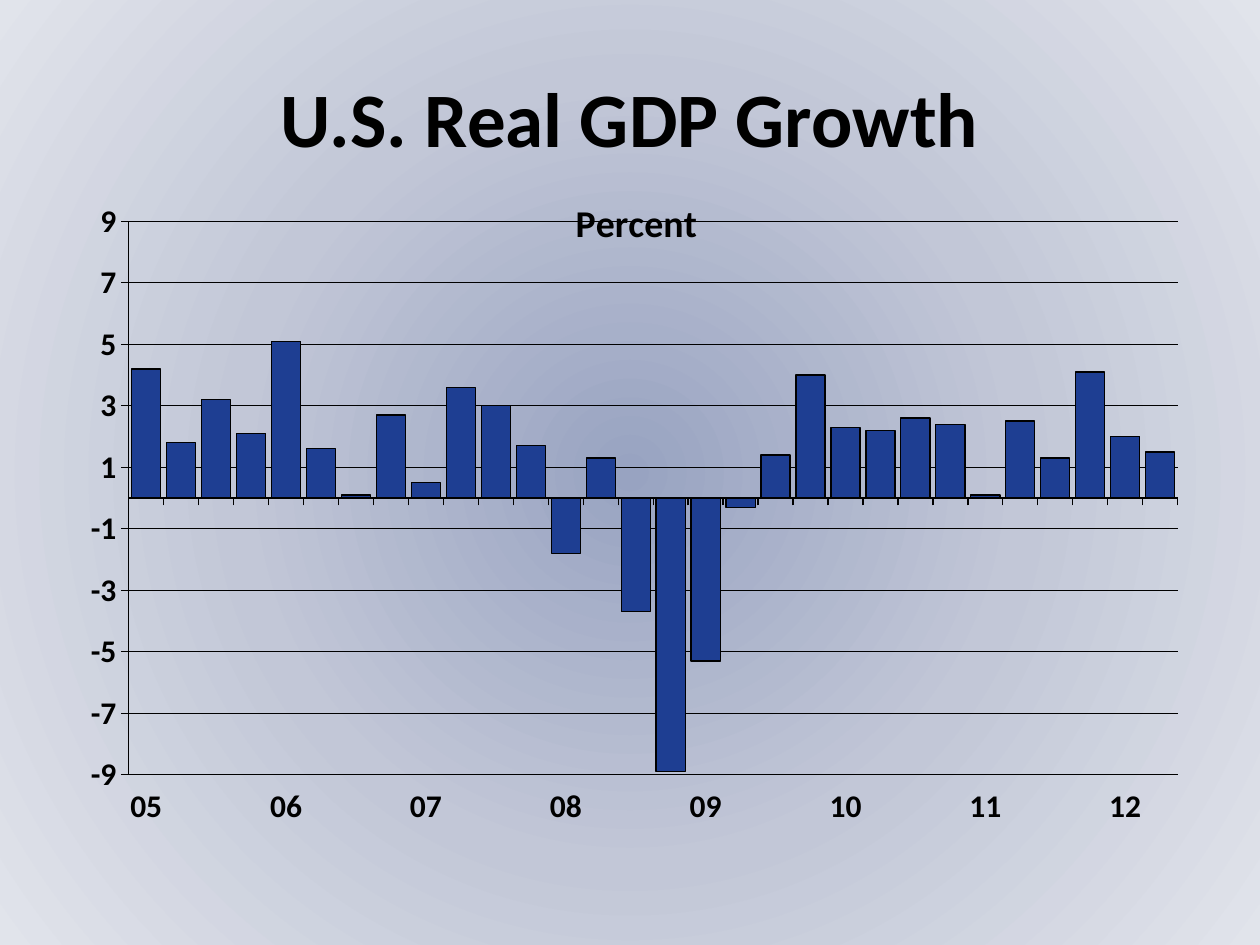
from lxml import etree
from pptx import Presentation
from pptx import util as u
from pptx.chart.data import CategoryChartData
from pptx.dml.color import RGBColor
from pptx.enum import chart as charts, text
from pptx.oxml.ns import qn


def rgb(hex_colour):
    return RGBColor.from_string(hex_colour)


def write(frame, content, size, colour="000000", font="Calibri", bold=True):
    """Fill a text frame with one centred, formatted paragraph."""
    paragraph = frame.paragraphs[0]
    paragraph.alignment = text.PP_ALIGN.CENTER
    run = paragraph.add_run()
    run.text = content
    run.font.size = u.Pt(size)
    run.font.name = font
    run.font.bold = bold
    run.font.color.rgb = rgb(colour)


presentation = Presentation()
presentation.slide_width = u.Inches(10)
presentation.slide_height = u.Inches(7.5)
slide = presentation.slides.add_slide(presentation.slide_layouts[5])

# Radial background, darkest in the centre
fill = slide.background.fill
fill.gradient()
gradient = slide.background._cSld.find(".//" + qn("a:gradFill"))
for child in list(gradient):
    gradient.remove(child)
stops = etree.SubElement(gradient, qn("a:gsLst"))
for position, colour in ((0, "98A3C1"), (50, "C2C7D7"), (100, "E1E4EB")):
    stop = etree.SubElement(stops, qn("a:gs"), pos=str(position * 1000))
    etree.SubElement(stop, qn("a:srgbClr"), val=colour)
circle = etree.SubElement(gradient, qn("a:path"), path="circle")
etree.SubElement(circle, qn("a:fillToRect"), l="50000", t="50000", r="50000", b="50000")

title = slide.shapes.title
title.left, title.top = u.Inches(0.5), u.Inches(0.3)
title.width, title.height = u.Inches(9), u.Inches(1.25)
title.text_frame.vertical_anchor = text.MSO_ANCHOR.MIDDLE
write(title.text_frame, "U.S. Real GDP Growth", size=44)

# Quarterly growth from 2005; only first quarters carry a label
growth = [
    4.2, 1.8, 3.2, 2.1, 5.1, 1.6, 0.1, 2.7, 0.5, 3.6,
    3, 1.7, -1.8, 1.3, -3.7, -8.9, -5.3, -0.3, 1.4, 4,
    2.3, 2.2, 2.6, 2.4, 0.1, 2.5, 1.3, 4.1, 2, 1.5,
]
data = CategoryChartData()
data.categories = [
    "" if quarter % 4 else f"{5 + quarter // 4:02d}" for quarter in range(len(growth))
]
data.add_series("Series 1", growth)
chart = slide.shapes.add_chart(
    charts.XL_CHART_TYPE.COLUMN_CLUSTERED,
    u.Inches(0.5), u.Inches(1.25), u.Inches(9), u.Inches(5.45), data,
).chart
chart.has_legend = False
chart.font.size = u.Pt(18)
chart.font.name = "Calibri"
chart.font.bold = True
chart.font.color.rgb = rgb("000000")
write(chart.chart_title.text_frame, "Percent", size=21.6)
chart.chart_title.include_in_layout = True

plot = chart.plots[0]
plot.gap_width = 20
plot.overlap = 70
plot.vary_by_categories = False
bars = plot.series[0]
bars.invert_if_negative = False
bars.format.fill.solid()
bars.format.fill.fore_color.rgb = rgb("1E3E92")

value_axis, category_axis = chart.value_axis, chart.category_axis
value_axis.minimum_scale = -9
value_axis.maximum_scale = 9
value_axis.major_unit = 2
value_axis.has_major_gridlines = True
value_axis.tick_labels.number_format = "General"
value_axis.tick_labels.number_format_is_linked = False
category_axis.tick_label_position = charts.XL_TICK_LABEL_POSITION.LOW
for axis in (value_axis, category_axis):
    axis.major_tick_mark = charts.XL_TICK_MARK.OUTSIDE
    axis.minor_tick_mark = charts.XL_TICK_MARK.NONE
for outlined in (bars, value_axis, category_axis, value_axis.major_gridlines):
    outlined.format.line.color.rgb = rgb("000000")
    outlined.format.line.width = u.Pt(0.75)

# Label every category, so that the blank ones keep their place
skip = etree.Element(qn("c:tickLblSkip"), val="1")
category_axis._element.find(qn("c:noMultiLvlLbl")).addprevious(skip)

# Fixed places for the plot area and the title, as fractions of the chart
chart_space = chart._chartSpace
places = {
    "c:plotArea": {"layoutTarget": "inner", "xMode": "edge", "yMode": "edge",
                   "x": 0.058, "y": 0.093, "w": 0.925, "h": 0.806},
    "c:title": {"xMode": "edge", "yMode": "edge", "x": 0.446, "y": 0.047},
}
for tag, place in places.items():
    parent = chart_space.find(".//" + qn(tag))
    layout = parent.find(qn("c:layout"))
    if layout is None:
        layout = etree.Element(qn("c:layout"))
        parent.insert(0, layout)
    manual = etree.SubElement(layout, qn("c:manualLayout"))
    for name, value in place.items():
        etree.SubElement(manual, qn("c:" + name), val=str(value))

presentation.save("out.pptx")
